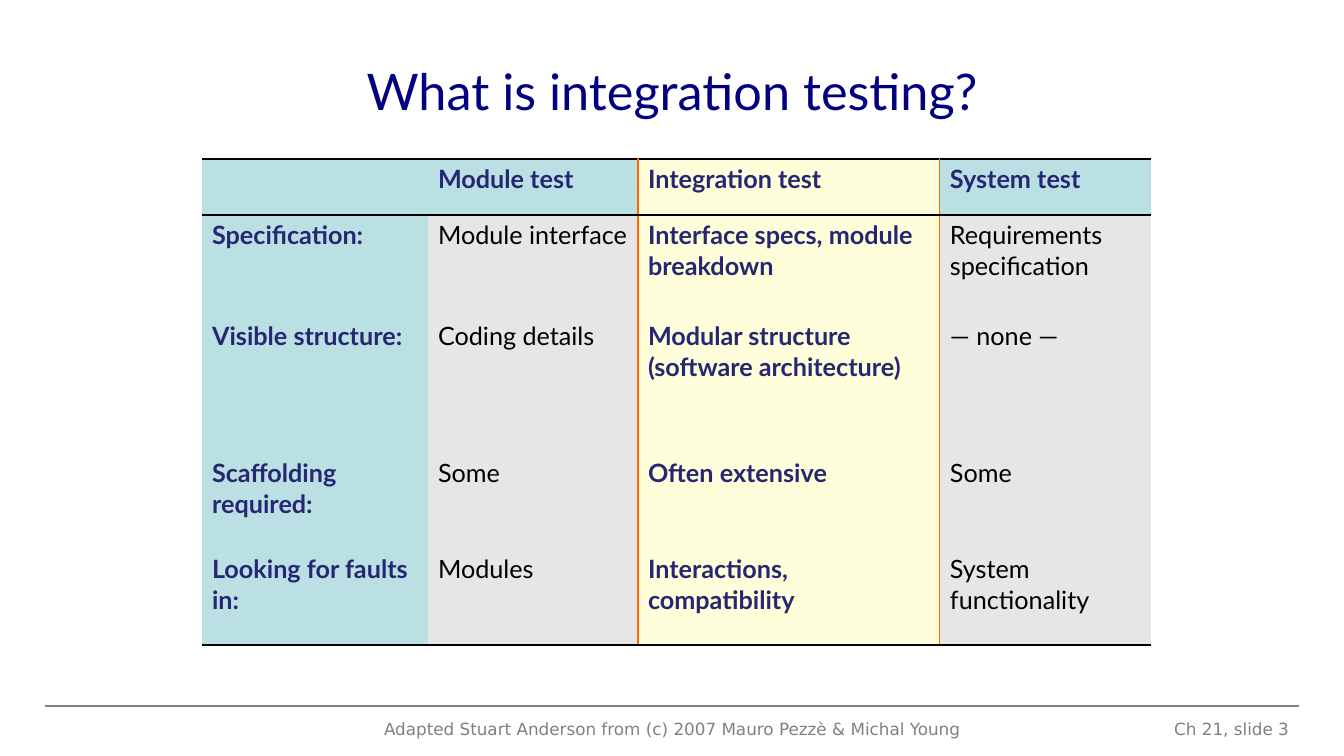
import dataclasses
import typing

import lxml.etree
import pptx
import pptx.dml.color
import pptx.enum.shapes
import pptx.enum.text
import pptx.oxml.ns
import pptx.util

EMU_PER_INCH = 914400
PX_PER_INCH = 100.8
Align = pptx.enum.text.PP_ALIGN
Anchor = pptx.enum.text.MSO_ANCHOR


@dataclasses.dataclass(frozen=True)
class Theme:
    body_font: str = "Lato"
    footer_font: str = "DejaVu Sans"
    title_size: int = 36
    cell_size: int = 18
    footer_size: int = 12
    title: str = "000080"
    heading: str = "262673"
    text: str = "000000"
    muted: str = "808080"
    label_fill: str = "BBE0E3"
    focus_fill: str = "FFFEDA"
    plain_fill: str = "E6E6E6"
    rule: str = "000000"
    focus_rule: str = "FF6600"
    rule_width: int = 2
    focus_rule_width: int = 1
    footer_rule_width: float = 0.75


THEME = Theme()


class Frame(typing.NamedTuple):
    left: int
    top: int
    width: int
    height: int


class Footer(typing.NamedTuple):
    text: str
    frame: Frame
    align: Align


TITLE_FRAME = Frame(67, 30, 1210, 121)
TABLE_FRAME = Frame(202, 159, 949, 486)
COLUMN_WIDTHS = (226, 210, 302, 211)
ROW_HEIGHTS = (56, 101, 137, 96, 96)
FOCUS_COLUMN = 2
RULED_ROW_EDGES = (0, 1, len(ROW_HEIGHTS))
FOCUS_COLUMN_EDGES = (FOCUS_COLUMN, FOCUS_COLUMN + 1)

COMPARISON = (
    ("", "Module test", "Integration test", "System test"),
    ("Specification:", "Module interface",
     "Interface specs, module breakdown", "Requirements specification"),
    ("Visible structure:", "Coding details",
     "Modular structure (software architecture)", "— none —"),
    ("Scaffolding required:", "Some", "Often extensive", "Some"),
    ("Looking for faults in:", "Modules",
     "Interactions, compatibility", "System functionality"),
)

FOOTERS = (
    Footer("Adapted Stuart Anderson from (c) 2007 Mauro Pezzè & Michal Young",
           Frame(349, 714, 647, 27), Align.CENTER),
    Footer("Ch 21, slide 3", Frame(1126, 714, 173, 27), Align.RIGHT),
)


def px(length: int) -> pptx.util.Emu:
    return pptx.util.Emu(round(length * EMU_PER_INCH / PX_PER_INCH))


def emu_frame(frame: Frame) -> list[pptx.util.Emu]:
    return [px(length) for length in frame]


def rgb(colour: str) -> pptx.dml.color.RGBColor:
    return pptx.dml.color.RGBColor.from_string(colour)


def format_text(text_frame, font: str, size: int, colour: str,
                bold: bool = False, align: Align = Align.LEFT) -> None:
    for para in text_frame.paragraphs:
        para.alignment = align
        for span in para.runs:
            span.font.name = font
            span.font.size = pptx.util.Pt(size)
            span.font.color.rgb = rgb(colour)
            span.font.bold = bold


def set_borders(cell, row: int, column: int) -> None:
    """Rule the black row edges and the orange edges of the focus column."""
    properties = cell._tc.get_or_add_tcPr()
    black = (THEME.rule, THEME.rule_width)
    orange = (THEME.focus_rule, THEME.focus_rule_width)
    sides = (
        ("a:lnL", orange if column in FOCUS_COLUMN_EDGES else None),
        ("a:lnR", orange if column + 1 in FOCUS_COLUMN_EDGES else None),
        ("a:lnT", black if row in RULED_ROW_EDGES else None),
        ("a:lnB", black if row + 1 in RULED_ROW_EDGES else None),
    )
    qn = pptx.oxml.ns.qn
    for position, (tag, style) in enumerate(sides):
        line = lxml.etree.Element(qn(tag))
        if style:
            colour, width = style
            line.set("w", str(pptx.util.Pt(width)))
            fill = lxml.etree.SubElement(line, qn("a:solidFill"))
            lxml.etree.SubElement(fill, qn("a:srgbClr"), val=colour)
        else:
            lxml.etree.SubElement(line, qn("a:noFill"))
        properties.insert(position, line)


def draw_title(page, text: str) -> None:
    title = page.shapes.title
    title.left, title.top, title.width, title.height = emu_frame(TITLE_FRAME)
    title.text_frame.text = text
    title.text_frame.vertical_anchor = Anchor.MIDDLE
    format_text(title.text_frame, THEME.body_font, THEME.title_size,
                THEME.title, align=Align.CENTER)


def draw_cell(cell, text: str, row: int, column: int) -> None:
    is_focus = column == FOCUS_COLUMN
    is_label = row == 0 or column == 0
    if is_focus:
        fill = THEME.focus_fill
    else:
        fill = THEME.label_fill if is_label else THEME.plain_fill
    strong = is_focus or is_label
    cell.fill.solid()
    cell.fill.fore_color.rgb = rgb(fill)
    cell.text_frame.text = text
    format_text(cell.text_frame, THEME.body_font, THEME.cell_size,
                THEME.heading if strong else THEME.text, bold=strong)
    set_borders(cell, row, column)


def draw_table(page) -> None:
    table = page.shapes.add_table(len(ROW_HEIGHTS), len(COLUMN_WIDTHS),
                                  *emu_frame(TABLE_FRAME)).table
    table.horz_banding = False
    for column, width in zip(table.columns, COLUMN_WIDTHS):
        column.width = px(width)
    for row, height in zip(table.rows, ROW_HEIGHTS):
        row.height = px(height)
    for row, texts in enumerate(COMPARISON):
        for column, text in enumerate(texts):
            draw_cell(table.cell(row, column), text, row, column)


def draw_footer_rule(page) -> None:
    rule = page.shapes.add_connector(
        pptx.enum.shapes.MSO_CONNECTOR.STRAIGHT,
        px(45), px(706), px(1299), px(706))
    rule.line.color.rgb = rgb(THEME.muted)
    rule.line.width = pptx.util.Pt(THEME.footer_rule_width)
    lxml.etree.SubElement(rule._element.spPr, pptx.oxml.ns.qn("a:effectLst"))


def draw_footer(page, footer: Footer) -> None:
    box = page.shapes.add_textbox(*emu_frame(footer.frame))
    box.text_frame.word_wrap = True
    box.text_frame.text = footer.text
    format_text(box.text_frame, THEME.footer_font, THEME.footer_size,
                THEME.muted, align=footer.align)


def main() -> None:
    deck = pptx.Presentation()
    deck.slide_width, deck.slide_height = px(1344), px(756)
    page = deck.slides.add_slide(deck.slide_layouts.get_by_name("Title Only"))

    # Heading and comparison
    draw_title(page, "What is integration testing?")
    draw_table(page)

    # Footer
    draw_footer_rule(page)
    for footer in FOOTERS:
        draw_footer(page, footer)

    deck.save("out.pptx")


if __name__ == "__main__":
    main()
